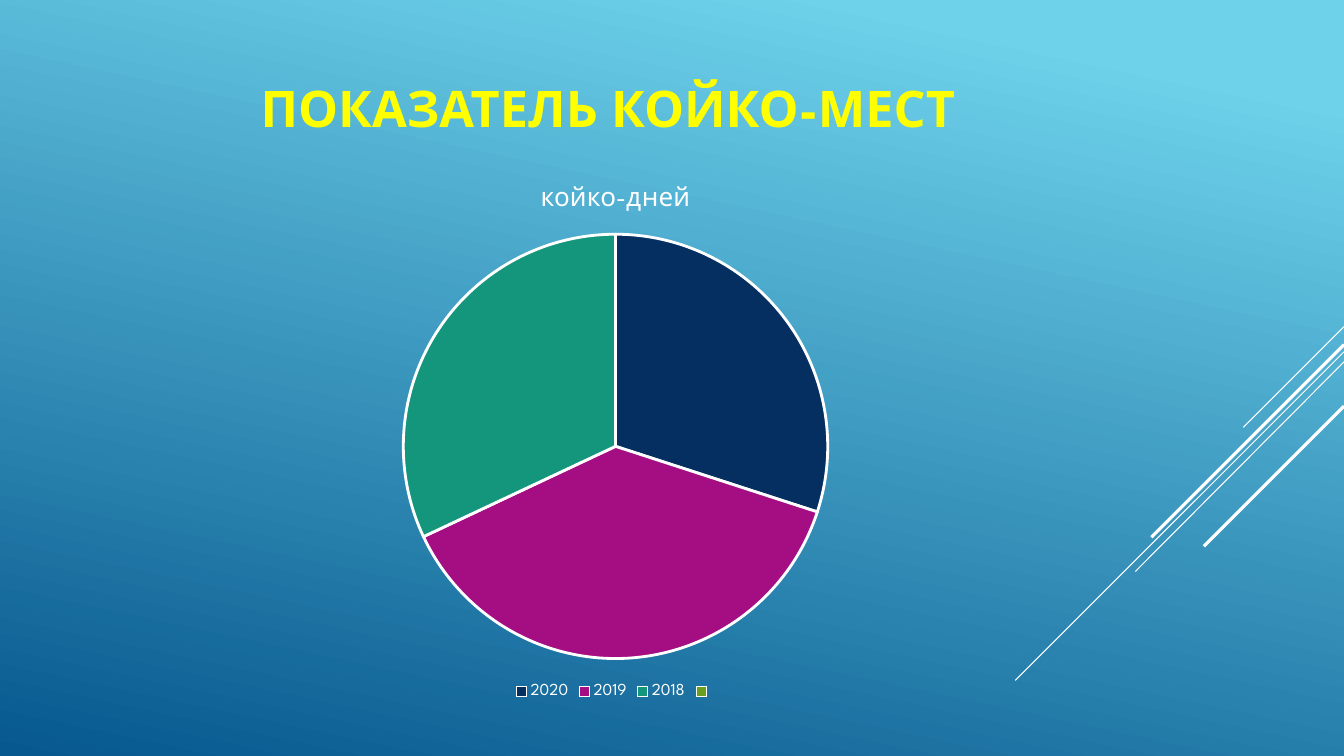
from lxml.etree import SubElement
from pptx import Presentation
from pptx.chart.data import CategoryChartData
from pptx.dml.color import RGBColor
from pptx.enum.chart import XL_CHART_TYPE as ChartType, XL_LEGEND_POSITION as LegendPosition
from pptx.enum.shapes import MSO_CONNECTOR as Connector
from pptx.enum.text import MSO_ANCHOR as Anchor, PP_ALIGN as Align
from pptx.oxml.ns import qn
from pptx.util import Inches, Pt

COLORS = {
    "white": "FFFFFF", "title": "FFFF00", "sky": "6ED2EB", "deep": "06588E",
    "navy": "052F61", "magenta": "A50E82", "teal": "14967C", "olive": "6A9E1F",
}
BED_DAYS = {"2020": (30, "navy"), "2019": (38, "magenta"),
            "2018": (32, "teal"), "": (0, "olive")}
STRIPES = [((13.33, 3.24), (12.33, 4.24), 0.75), ((13.33, 3.49), (10.07, 6.75), 0.75),
           ((13.33, 3.59), (11.26, 5.67), 0.75), ((13.33, 3.42), (11.42, 5.33), 2.25),
           ((13.33, 4.03), (11.94, 5.42), 2.25)]


def color(name):
    return RGBColor.from_string(COLORS[name])


def style_font(font, size, tint="white", bold=False, face="League Spartan"):
    font.name, font.size, font.bold = face, Pt(size), bold
    font.color.rgb = color(tint)


def write(frame, text, align=Align.CENTER, **style):
    para = frame.paragraphs[0]
    para.alignment = align
    span = para.add_run()
    span.text = text
    style_font(span.font, **style)


class SlideBuilder:
    """Holds the deck and the current page, and adds styled elements to it."""

    def __init__(self, width, height):
        self.deck = Presentation()
        self.deck.slide_width, self.deck.slide_height = Inches(width), Inches(height)
        self.page = self.deck.slides.add_slide(self.deck.slide_layouts[5])

    def background(self, stops, angle):
        fill = self.page.background.fill
        fill.gradient()
        fill.gradient_angle = angle
        for stop, (position, tint) in zip(fill.gradient_stops, stops):
            stop.position = position
            stop.color.rgb = color(tint)

    def stripe(self, start, end, width):
        line = self.page.shapes.add_connector(
            Connector.STRAIGHT, *map(Inches, start + end))
        line.line.color.rgb = color("white")
        line.line.width = Pt(width)
        SubElement(line._element.spPr, qn("a:effectLst"))

    def title(self, text, left, top, width, height, indent):
        box = self.page.shapes.title
        box.left, box.top, box.width, box.height = map(Inches, (left, top, width, height))
        frame = box.text_frame
        frame.word_wrap = True
        frame.vertical_anchor = Anchor.MIDDLE
        frame.margin_left = Inches(indent)
        write(frame, text, size=36, tint="title", bold=True)

    def pie(self, name, slices, left, top, width, height):
        data = CategoryChartData()
        data.categories = list(slices)
        data.add_series(name, [value for value, _ in slices.values()])
        chart = self.page.shapes.add_chart(
            ChartType.PIE, *map(Inches, (left, top, width, height)), data).chart
        style_font(chart.font, 10)
        chart.has_title = True
        write(chart.chart_title.text_frame, name, size=18.6)
        chart.chart_title.include_in_layout = False
        chart.has_legend = True
        chart.legend.position = LegendPosition.BOTTOM
        chart.legend.include_in_layout = False
        style_font(chart.legend.font, 12)
        plot = chart.plots[0]
        plot.vary_by_categories = True
        for index, (_, tint) in enumerate(slices.values()):
            area = plot.series[0].points[index].format
            area.fill.solid()
            area.fill.fore_color.rgb = color(tint)
            area.line.color.rgb = color("white")
            area.line.width = Pt(2)


def main():
    slide = SlideBuilder(13.33, 7.5)
    slide.background([(0.1, "sky"), (1, "deep")], angle=258)
    for start, end, width in STRIPES:
        slide.stripe(start, end, width)
    slide.title("ПОКАЗАТЕЛЬ КОЙКО-МЕСТ", 0.44, 0.24, 9.33, 1.65, indent=1.95)
    slide.pie("койко-дней", BED_DAYS, 1.95, 1.62, 8.31, 5.36)
    slide.deck.save("out.pptx")


if __name__ == "__main__":
    main()
